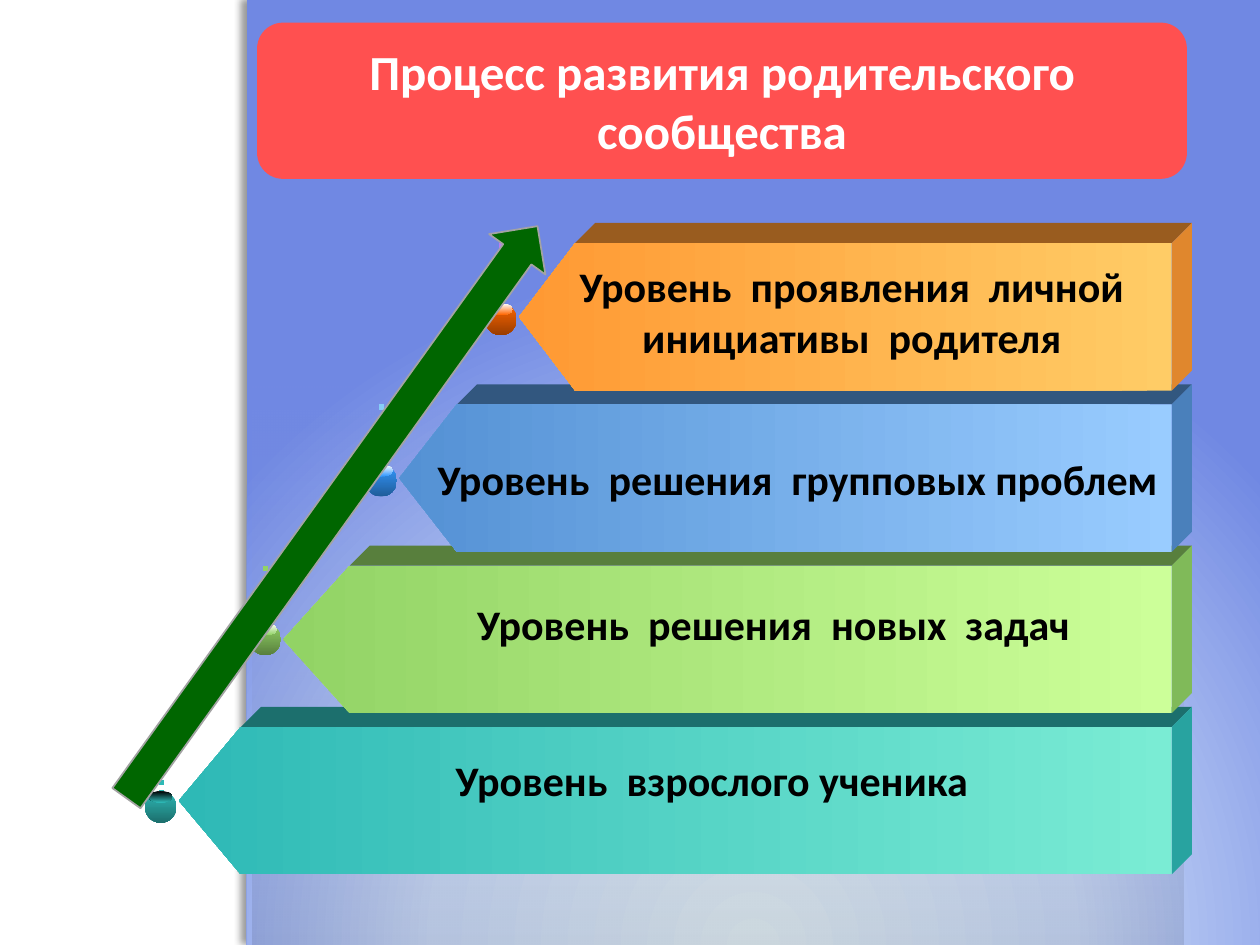
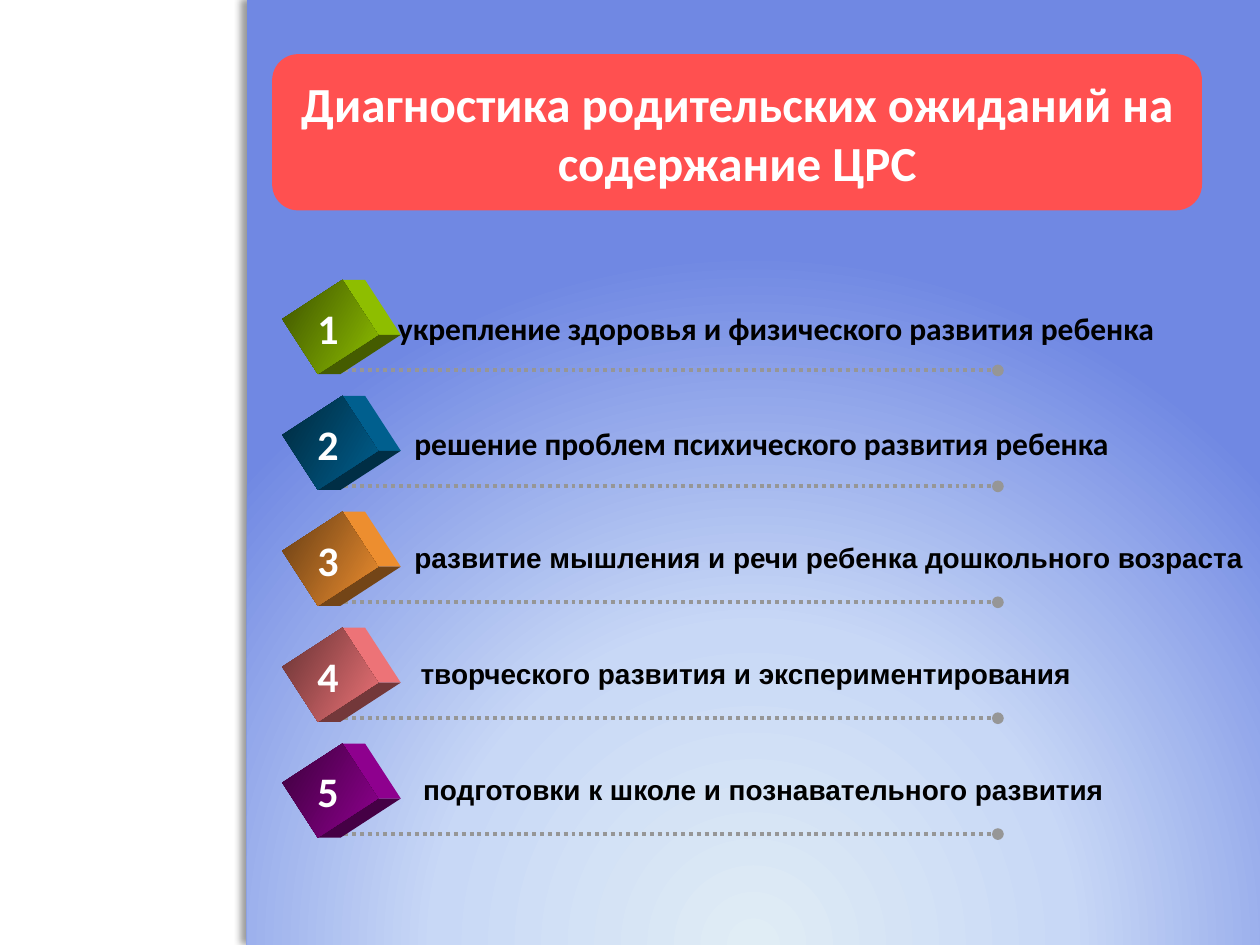
from math import cos, radians, sin

from lxml import etree
from pptx import Presentation
from pptx.dml.color import RGBColor
from pptx.enum.dml import MSO_LINE
from pptx.enum.shapes import MSO_CONNECTOR, MSO_SHAPE
from pptx.enum.text import MSO_ANCHOR, PP_ALIGN
from pptx.oxml import parse_xml
from pptx.oxml.ns import nsdecls, qn
from pptx.util import Inches, Pt

RECT, OVAL = MSO_SHAPE.RECTANGLE, MSO_SHAPE.OVAL
ROUND, ARROW = MSO_SHAPE.ROUNDED_RECTANGLE, MSO_SHAPE.UP_ARROW
PLATE = MSO_SHAPE.PENTAGON
LEFT, CENTER = PP_ALIGN.LEFT, PP_ALIGN.CENTER
TOP, MIDDLE = MSO_ANCHOR.TOP, MSO_ANCHOR.MIDDLE
DOTS = MSO_LINE.ROUND_DOT
STRAIGHT = MSO_CONNECTOR.STRAIGHT

BLACK = RGBColor(0x00, 0x00, 0x00)
WHITE = RGBColor(0xFF, 0xFF, 0xFF)
RED = RGBColor(0xFF, 0x50, 0x50)
GREEN = RGBColor(0x00, 0x66, 0x00)
EDGE = RGBColor(0xA3, 0xA3, 0xA3)
GRAY = RGBColor(0x96, 0x96, 0x96)
PALE = RGBColor(0xE0, 0xED, 0xF5)
SKY = RGBColor(0xC8, 0xD8, 0xF6)
BLUE = RGBColor(0x70, 0x88, 0xE3)
TEAL = RGBColor(0x2E, 0xB9, 0xB6)
MINT = RGBColor(0x7A, 0xEC, 0xD4)
LEAF = RGBColor(0x92, 0xD3, 0x65)
LIME = RGBColor(0xCC, 0xFF, 0x99)
AZURE = RGBColor(0x33, 0x99, 0xFF)
STEEL = RGBColor(0x54, 0x91, 0xD4)
ICE = RGBColor(0x99, 0xCC, 0xFF)
FLAME = RGBColor(0xFF, 0x66, 0x00)
AMBER = RGBColor(0xFF, 0x99, 0x33)
HONEY = RGBColor(0xFF, 0xCC, 0x66)
AQUA = RGBColor(0x86, 0xCE, 0xF6)
LILAC = RGBColor(0xB6, 0x7F, 0xF3)
OLIVE = RGBColor(0x99, 0xCC, 0x00)
NAVY = RGBColor(0x00, 0x66, 0x99)
ROSE = RGBColor(0xFF, 0x7C, 0x80)
PLUM = RGBColor(0x99, 0x00, 0x99)

# Bars: left, point, ball drop, base, light end, ball, glint, dots, text, text box
BARS = [
    (1.42, 0.42, 0.51, TEAL, MINT, TEAL, BLACK, TEAL,
     "Уровень  взрослого ученика", (2.47, 5.94, 6.36, 0.5)),
    (2.25, 0.45, 0.46, LEAF, LIME, LEAF, WHITE, LEAF,
     "Уровень  решения  новых  задач", (3.66, 4.7, 4.96, 0.5)),
    (3.17, 0.39, 0.48, STEEL, ICE, AZURE, WHITE, AQUA,
     "Уровень  решения  групповых проблем", (3.34, 3.55, 5.98, 0.5)),
    (4.12, 0.38, 0.48, AMBER, HONEY, FLAME, WHITE, LILAC,
     "Уровень  проявления  личной\nинициативы  родителя",
     (4.4, 2.02, 4.72, 0.91)),
]
# Rows: cube colour, text, text left, font, size
ROWS = [
    (OLIVE, "укрепление здоровья и физического развития ребенка",
     3.06, "Calibri", 18),
    (NAVY, "решение проблем психического развития ребенка",
     3.19, "Calibri", 18),
    (AMBER, "развитие мышления и речи ребенка дошкольного возраста",
     3.19, "Arial", 16),
    (ROSE, "творческого развития и экспериментирования",
     3.24, "Arial", 16),
    (PLUM, "подготовки к школе и познавательного развития",
     3.26, "Arial", 16),
]
WIDTH, HEIGHT = 10, 7.5
RIGHT, TALL, DEPTH = 9.3, 1.17, 0.16


def shade(color, part):
    return RGBColor(*(round(c * part) for c in color))


def blend(shape, stops, angle=None):
    """Gradient from (place, colour, opacity) stops; circular with no angle."""
    marks = "".join(
        f'<a:gs pos="{pos * 1000}"><a:srgbClr val="{color}">'
        f'<a:alpha val="{alpha * 1000}"/></a:srgbClr></a:gs>'
        for pos, color, alpha in stops)
    if angle is None:
        course = ('<a:path path="circle"><a:fillToRect l="50000" t="130000" '
                  'r="50000" b="-30000"/></a:path>')
    else:
        course = f'<a:lin ang="{angle * 60000}" scaled="0"/>'
    props = shape._element.spPr
    props.replace(props.find(qn("a:noFill")), parse_xml(
        f'<a:gradFill {nsdecls("a")} rotWithShape="0">'
        f'<a:gsLst>{marks}</a:gsLst>{course}</a:gradFill>'))


def paint(shape, fill):
    """Fill with a colour, or with a (first, last, angle) gradient."""
    shape.shadow.inherit = False
    shape.line.fill.background()
    if isinstance(fill, RGBColor):
        shape.fill.solid()
        shape.fill.fore_color.rgb = fill
    else:
        shape.fill.background()
        if fill:
            first, last, angle = fill
            blend(shape, [(0, first, 100), (100, last, 100)], angle)
    return shape


def block(slide, kind, box, fill=None):
    return paint(slide.shapes.add_shape(kind, *map(Inches, box)), fill)


def facet(slide, points, fill):
    spots = [(Inches(x), Inches(y)) for x, y in points]
    path = slide.shapes.build_freeform(*spots[0])
    path.add_line_segments(spots[1:])
    return paint(path.convert_to_shape(), fill)


def dotted(slide, start, end, color, width, dot=False):
    line = slide.shapes.add_connector(STRAIGHT, *map(Inches, start + end))
    line.line.color.rgb = color
    line.line.width = Pt(width)
    line.line.dash_style = DOTS
    if dot:
        edge = line.line._get_or_add_ln()
        etree.SubElement(edge, qn("a:tailEnd"), type="oval")
    etree.SubElement(line._element.spPr, qn("a:effectLst"))


def write(frame, text, size=24, font="Calibri", color=BLACK, align=CENTER,
          anchor=TOP, wrap=False):
    frame.word_wrap = wrap
    frame.vertical_anchor = anchor
    if align == LEFT:
        frame.margin_right = 0
    for i, words in enumerate(text.split("\n")):
        para = frame.add_paragraph() if i else frame.paragraphs[0]
        para.alignment = align
        run = para.add_run()
        run.text = words
        run.font.size, run.font.name, run.font.bold = Pt(size), font, True
        run.font.color.rgb = color


def label(slide, box, text, **style):
    write(slide.shapes.add_textbox(*map(Inches, box)).text_frame, text, **style)


def backdrop(slide):
    panel = block(slide, RECT, (1.96, 0, 8.04, HEIGHT))
    blend(panel, [(0, PALE, 100), (46, SKY, 100), (100, BLUE, 100)])
    effects = panel._element.spPr.find(qn("a:effectLst"))
    effects.append(parse_xml(
        f'<a:outerShdw {nsdecls("a")} blurRad="{Pt(4)}" dist="{Pt(3)}" '
        f'dir="10800000" algn="r" rotWithShape="0"><a:srgbClr val="{BLACK}">'
        '<a:alpha val="40000"/></a:srgbClr></a:outerShdw>'))


def title(slide, left, top, text):
    plate = block(slide, ROUND, (left, top, 7.38, 1.24), RED)
    write(plate.text_frame, text, size=28, color=WHITE, anchor=MIDDLE, wrap=True)


def ball(slide, left, top, color, glint):
    block(slide, OVAL, (left, top, 0.25, 0.25), (color, shade(color, 0.6), 90))
    block(slide, OVAL, (left + 0.03, top, 0.19, 0.09), (glint, color, 90))


def bar(slide, left, top, point, base, light):
    """Arrow bar with its upper and right faces."""
    neck, low = left + point * TALL, top + TALL
    far, high = RIGHT + DEPTH, top - DEPTH
    facet(slide, [(neck, top), (neck + DEPTH, high), (far, high), (RIGHT, top)],
          shade(base, 0.6))
    facet(slide, [(RIGHT, top), (far, high), (far, low - DEPTH), (RIGHT, low)],
          shade(base, 0.88))
    # The flip mirrors the gradient, so the light end comes first
    front = block(slide, PLATE, (left, top, RIGHT - left, TALL),
                  (light, base, 0))
    front.adjustments[0] = point
    front._element.spPr.xfrm.set("flipH", "1")


def cube(slide, left, top, color):
    """Tilted square face with two visible sides."""
    wide, tall, turn = 0.52, 0.57, 57
    c, s = cos(radians(turn)), sin(radians(turn))
    mid_x, mid_y = left + wide / 2, top + tall / 2

    def corner(x, y, push=0):
        x, y = x * wide / 2, y * tall / 2
        return mid_x + x * c - y * s + push, mid_y + x * s + y * c

    peak, side, foot = (-1, -1), (1, -1), (1, 1)
    for a, b, part in ((peak, side, 0.93), (side, foot, 0.45)):
        facet(slide, [corner(*a), corner(*a, 0.18), corner(*b, 0.18),
                      corner(*b)], shade(color, part))
    face = block(slide, RECT, (left, top, wide, tall),
                 (shade(color, 0.4), shade(color, 0.93), 30))
    face.rotation = turn


def row(slide, top, number, color, text, left, font, size):
    dotted(slide, (2.67, top + 0.63), (7.92, top + 0.63), GRAY, 2.25, dot=True)
    cube(slide, 2.36, top, color)
    label(slide, (left, top + 0.09, WIDTH - left, 0.4), text, size=size,
          font=font, align=LEFT)
    label(slide, (2.42, top + 0.04, 0.39, 0.5), str(number), color=WHITE,
          align=LEFT)


def levels(slide):
    backdrop(slide)
    haze = block(slide, RECT, (2, 2.79, 7.39, 4.71))
    blend(haze, [(0, BLACK, 10), (100, WHITE, 0)], 270)
    for i, (left, point, drop, base, light, tone, glint, dots, text,
            box) in enumerate(BARS):
        top = 5.77 - 1.28 * i
        ball(slide, left - 0.27, top + drop, tone, glint)
        dotted(slide, (left - 0.14, top), (left - 0.14, top + drop), dots, 3)
        bar(slide, left, top, point, base, light)
        label(slide, box, text)
    title(slide, 2.04, 0.18, "Процесс развития родительского сообщества")
    # Rising arrow
    arrow = block(slide, ARROW, (2.36, 1.27, 0.55, 5.59), GREEN)
    arrow.line.color.rgb = EDGE
    arrow.line.width = Pt(1)
    arrow.rotation = 35.7


def needs(slide):
    backdrop(slide)
    for i, parts in enumerate(ROWS):
        row(slide, 2.31 + 0.92 * i, i + 1, *parts)
    title(slide, 2.16, 0.43,
          "Диагностика родительских ожиданий на содержание ЦРС")


def main():
    deck = Presentation()
    deck.slide_width, deck.slide_height = Inches(WIDTH), Inches(HEIGHT)
    for build in (levels, needs):
        build(deck.slides.add_slide(deck.slide_layouts[6]))
    deck.save("out.pptx")


if __name__ == "__main__":
    main()
